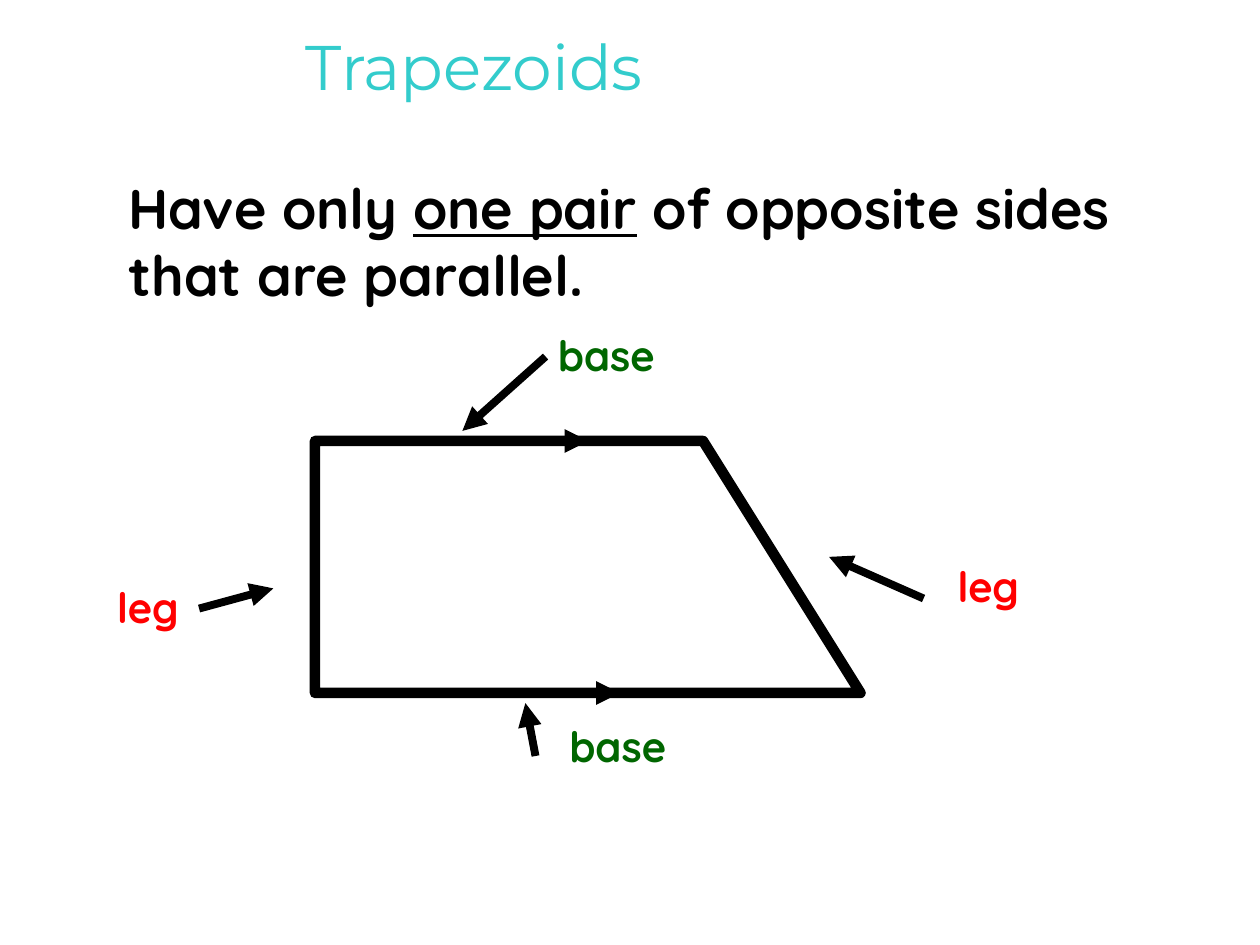
import pptx
import pptx.dml.color
import pptx.enum.shapes
import pptx.enum.text
import pptx.oxml.ns
import pptx.util
from lxml import etree

INK, TEAL, GREEN, RED = "000000", "33CCCC", "006600", "FF0000"
WIDTH, HEIGHT = 10, 7.5

TITLE = [("Trapezoids", False)]
DEFINITION = [
    ("Have only ", False),
    ("one pair", True),
    (" of opposite sides that are parallel.", False),
]
# word, colour, left, top, width of its box, then start and tip of its arrow
LABELS = [
    ("base", GREEN, 4.33, 2.57, 1.1, (4.33, 2.83), (3.67, 3.42)),
    ("base", GREEN, 4.42, 5.67, 2.33, (4.25, 6), (4.17, 5.58)),
    ("leg", RED, 0.83, 4.57, 0.72, (1.58, 4.83), (2.17, 4.67)),
    ("leg", RED, 7.5, 4.4, 0.81, (7.33, 4.75), (6.58, 4.42)),
]
TRAPEZOID = [(2.5, 3.5), (2.5, 5.5), (6.83, 5.5), (5.58, 3.5)]
# arrows lying on the two bases mark them as parallel
PARALLEL_MARKS = [((2.5, 3.5), (4.67, 3.5)), ((3.33, 5.5), (4.92, 5.5))]


def rgb(value):
    return pptx.dml.color.RGBColor.from_string(value)


def add_text(page, spans, left, top, width, height, *, size, color,
             font="Quicksand", bold=True, wrap=False):
    """Add a text box; spans are pairs of text and whether it is underlined."""
    box = page.shapes.add_textbox(
        *map(pptx.util.Inches, (left, top, width, height)))
    box.text_frame.word_wrap = wrap
    box.text_frame.vertical_anchor = pptx.enum.text.MSO_ANCHOR.TOP
    para = box.text_frame.paragraphs[0]
    for text, underlined in spans:
        span = para.add_run()
        span.text = text
        span.font.name = font
        span.font.size = pptx.util.Pt(size)
        span.font.bold = bold
        span.font.underline = underlined
        span.font.color.rgb = rgb(color)


def add_arrow(page, start, tip):
    arrow = page.shapes.add_connector(
        pptx.enum.shapes.MSO_CONNECTOR.STRAIGHT,
        *map(pptx.util.Inches, start + tip))
    arrow.line.color.rgb = rgb(INK)
    arrow.line.width = pptx.util.Pt(4.5)
    name = pptx.oxml.ns.qn
    etree.SubElement(arrow.line._get_or_add_ln(), name("a:tailEnd"),
                     type="triangle")
    etree.SubElement(arrow._element.spPr, name("a:effectLst"))


def add_outline(page, corners):
    """Draw a closed outline; the builder needs whole-number coordinates."""
    points = [tuple(map(pptx.util.Inches, corner)) for corner in corners]
    builder = page.shapes.build_freeform(*points[0])
    builder.add_line_segments(points[1:], close=True)
    outline = builder.convert_to_shape()
    outline.shadow.inherit = False
    outline.fill.background()
    outline.line.color.rgb = rgb(INK)
    outline.line.width = pptx.util.Pt(6)
    etree.SubElement(outline.line._get_or_add_ln(),
                     pptx.oxml.ns.qn("a:round"))


def main():
    deck = pptx.Presentation()
    deck.slide_width = pptx.util.Inches(WIDTH)
    deck.slide_height = pptx.util.Inches(HEIGHT)
    page = deck.slides.add_slide(deck.slide_layouts[6])

    add_text(page, TITLE, 2.33, 0.17, 5.17, 0.83, size=36, color=TEAL,
             font="Montserrat", bold=False, wrap=True)
    add_text(page, DEFINITION, 0.92, 1.33, 8.5, 1.17, size=32, color=INK,
             wrap=True)
    for start, tip in PARALLEL_MARKS:
        add_arrow(page, start, tip)
    for word, color, left, top, width, start, tip in LABELS:
        add_text(page, [(word, False)], left, top, width, 0.5, size=24,
                 color=color, wrap=width > 2)
        add_arrow(page, start, tip)
    add_outline(page, TRAPEZOID)

    deck.save("out.pptx")


if __name__ == "__main__":
    main()
